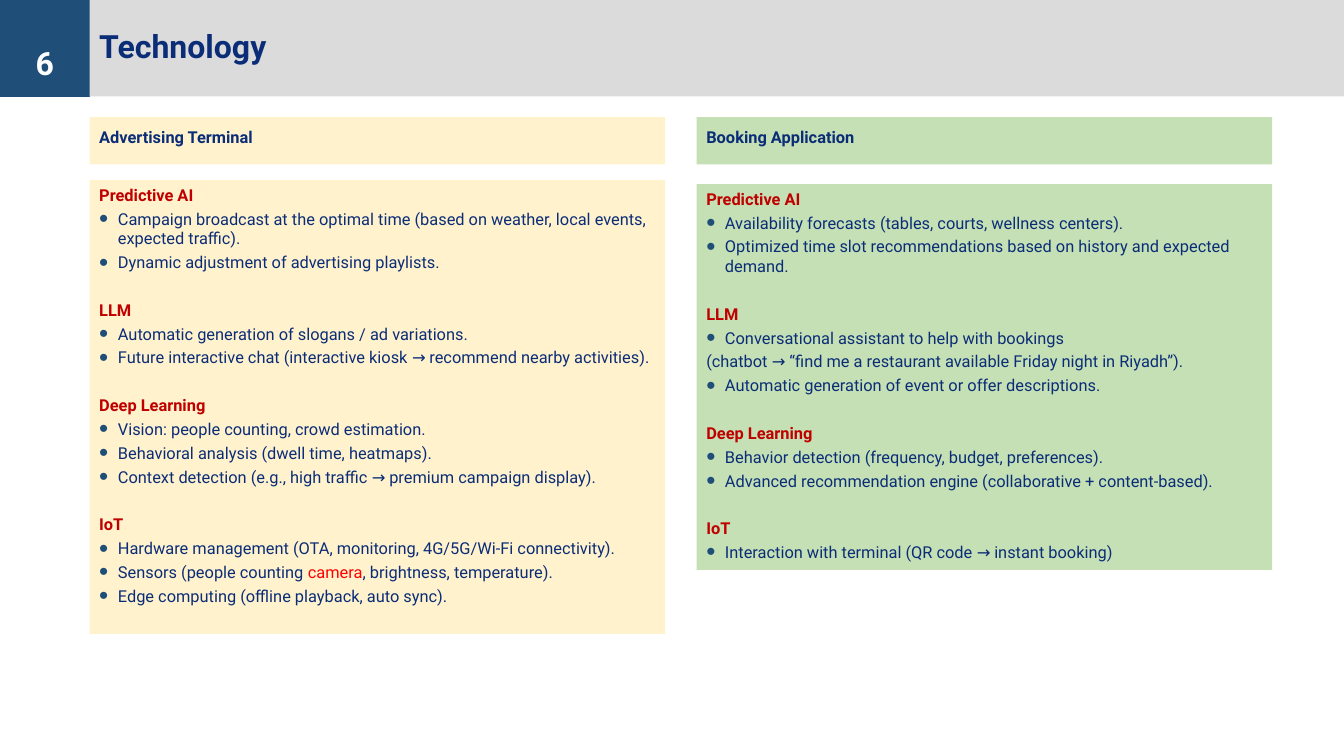
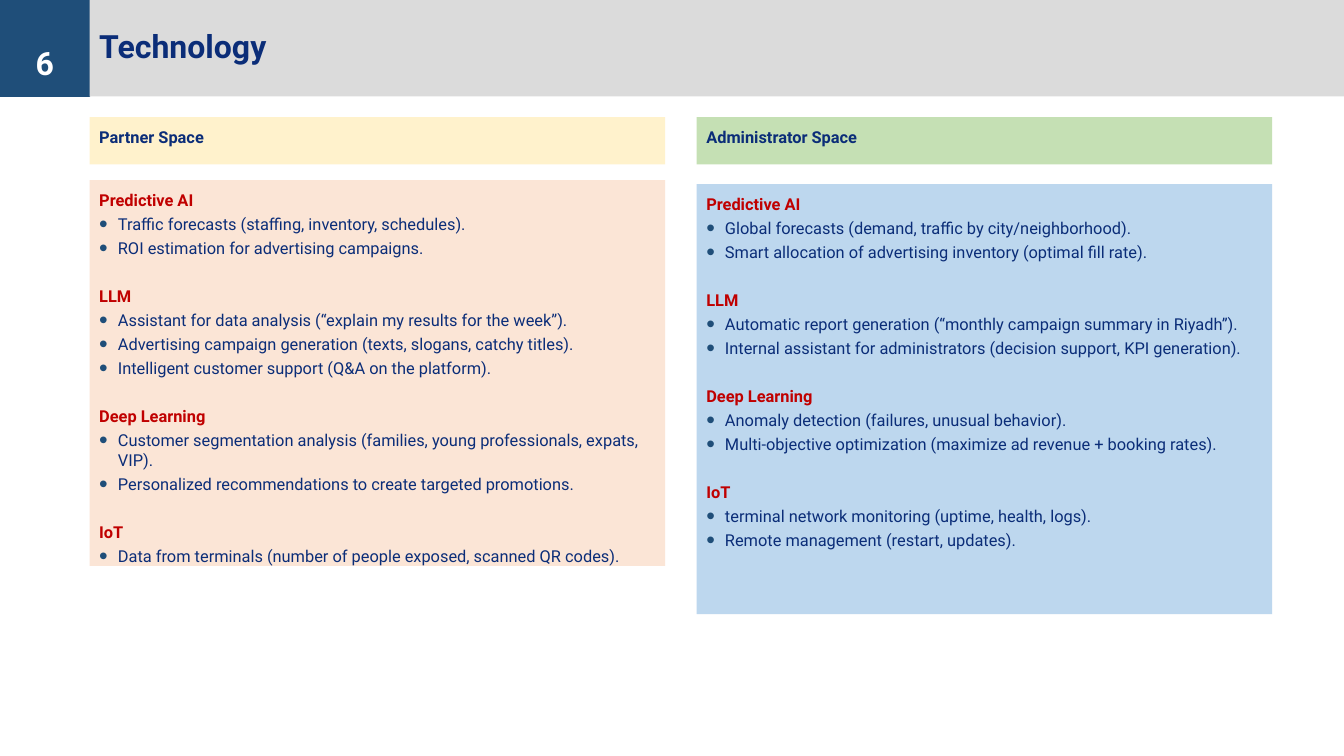
from lxml.etree import SubElement
from pptx import Presentation
from pptx.dml.color import RGBColor
from pptx.enum.shapes import MSO_SHAPE as SHAPE
from pptx.enum.text import MSO_ANCHOR as ANCHOR, PP_ALIGN as ALIGN
from pptx.oxml.ns import qn
from pptx.util import Inches, Pt

FONT = "Roboto"
NAVY, BLUE, GREY, WHITE = "0B2D78", "1F4E79", "DBDBDB", "FFFFFF"
DARK_RED, RED = "C00000", "FF0000"
YELLOW, GREEN, PEACH, SKY = "FFF2CC", "C5E0B4", "FBE5D6", "BDD7EE"

BAND_W, BAND_H = 0.91, 0.98
COLUMNS = [(0.91, 1.83), (7.08, 1.87)]
COLUMN_W = 5.85
HANG = 0.19
SECTION_GAP = 17.5

SLIDES = [
    dict(inset=0.05, before=3, bullet_size=159, panels=[
        dict(header="Advertising Terminal", fill=YELLOW, height=4.61, sections={
            "Predictive AI": [
                "Campaign broadcast at the optimal time (based on weather, local events, expected traffic).",
                "Dynamic adjustment of advertising playlists."],
            "LLM": [
                "Automatic generation of slogans / ad variations.",
                "Future interactive chat (interactive kiosk → recommend nearby activities)."],
            "Deep Learning": [
                "Vision: people counting, crowd estimation.",
                "Behavioral analysis (dwell time, heatmaps).",
                "Context detection (e.g., high traffic → premium campaign display)."],
            "IoT": [
                "Hardware management (OTA, monitoring, 4G/5G/Wi-Fi connectivity).",
                ["Sensors (people counting ", ("camera", RED), ", brightness, temperature)."],
                "Edge computing (offline playback, auto sync)."],
        }),
        dict(header="Booking Application", fill=GREEN, height=3.92, sections={
            "Predictive AI": [
                "Availability forecasts (tables, courts, wellness centers).",
                "Optimized time slot recommendations based on history and expected demand."],
            "LLM": [
                "Conversational assistant to help with bookings",
                "(chatbot → “find me a restaurant available Friday night in Riyadh”).",
                "Automatic generation of event or offer descriptions."],
            "Deep Learning": [
                "Behavior detection (frequency, budget, preferences).",
                "Advanced recommendation engine (collaborative + content-based)."],
            "IoT": ["Interaction with terminal (QR code → instant booking)"],
        }),
    ]),
    dict(inset=0.1, before=3.2, bullet_size=150, panels=[
        dict(header="Partner Space", fill=PEACH, height=3.92, sections={
            "Predictive AI": [
                "Traffic forecasts (staffing, inventory, schedules).",
                "ROI estimation for advertising campaigns."],
            "LLM": [
                "Assistant for data analysis (“explain my results for the week”).",
                "Advertising campaign generation (texts, slogans, catchy titles).",
                "Intelligent customer support (Q&A on the platform)."],
            "Deep Learning": [
                "Customer segmentation analysis (families, young professionals, expats, VIP).",
                "Personalized recommendations to create targeted promotions."],
            "IoT": ["Data from terminals (number of people exposed, scanned QR codes)."],
        }),
        dict(header="Administrator Space", fill=SKY, height=4.37, sections={
            "Predictive AI": [
                "Global forecasts (demand, traffic by city/neighborhood).",
                "Smart allocation of advertising inventory (optimal fill rate)."],
            "LLM": [
                "Automatic report generation (“monthly campaign summary in Riyadh”).",
                "Internal assistant for administrators (decision support, KPI generation)."],
            "Deep Learning": [
                "Anomaly detection (failures, unusual behavior).",
                "Multi-objective optimization (maximize ad revenue + booking rates)."],
            "IoT": [
                "terminal network monitoring (uptime, health, logs).",
                "Remote management (restart, updates)."],
        }),
    ]),
]


def rgb(color):
    return RGBColor.from_string(color)


def set_frame(sp, inset, anchor=ANCHOR.TOP):
    tf = sp.text_frame
    tf.word_wrap = True
    tf.vertical_anchor = anchor
    tf.margin_left = tf.margin_right = Inches(0.1)
    tf.margin_top = tf.margin_bottom = Inches(inset)
    return tf


def add_box(s, x, y, w, h, fill, line=None):
    sp = s.shapes.add_shape(SHAPE.RECTANGLE, Inches(x), Inches(y), Inches(w), Inches(h))
    sp.shadow.inherit = False
    sp.fill.solid()
    sp.fill.fore_color.rgb = rgb(fill)
    if line:
        sp.line.color.rgb = rgb(line)
        sp.line.width = Pt(2)
    else:
        sp.line.fill.background()
    return sp


def add_bullet(p, size):
    pPr = p._p.get_or_add_pPr()
    pPr.set("marL", str(Inches(HANG)))
    pPr.set("indent", str(-Inches(HANG)))
    color = SubElement(pPr, qn("a:buClr"))
    SubElement(color, qn("a:srgbClr"), val=BLUE)
    SubElement(pPr, qn("a:buSzPct"), val=str(size * 1000))
    SubElement(pPr, qn("a:buFont"), typeface="Arial")
    SubElement(pPr, qn("a:buChar"), char="•")


def add_text(tf, text, size=12, color=NAVY, bold=False, align=ALIGN.LEFT,
             before=0, spacing=None, bullet=None):
    p = tf.paragraphs[0]
    if p.runs:
        p = tf.add_paragraph()
    p.alignment = align
    p.space_before = Pt(before)
    if spacing:
        p.line_spacing = spacing
    if bullet:
        add_bullet(p, bullet)
    for part in [text] if isinstance(text, str) else text:
        words, tint = (part, color) if isinstance(part, str) else part
        r = p.add_run()
        r.text = words
        r.font.name = FONT
        r.font.size = Pt(size)
        r.font.bold = bold
        r.font.color.rgb = rgb(tint)


def add_title_band(s, title, number):
    add_box(s, 0, 0, BAND_W, BAND_H - 0.01, BLUE, line=BLUE)
    band = add_box(s, BAND_W, 0, 12.75, BAND_H, GREY)
    add_text(set_frame(band, 0.1, ANCHOR.MIDDLE), title, size=23.4, bold=True, spacing=0.9)
    box = s.shapes.add_textbox(0, 0, Inches(BAND_W), Inches(0.77))
    add_text(set_frame(box, 0.05), number, size=23.4, color=WHITE, bold=True,
             align=ALIGN.CENTER, spacing=2.0)


def add_header(s, x, text, fill):
    sp = add_box(s, x, 1.19, COLUMN_W, 0.48, fill)
    add_text(set_frame(sp, 0.1), text, bold=True, before=3.2)


def add_panel(s, x, y, panel, inset, before, bullet_size):
    sp = add_box(s, x, y, COLUMN_W, panel["height"], panel["fill"])
    tf = set_frame(sp, inset)
    for i, (heading, items) in enumerate(panel["sections"].items()):
        gap = SECTION_GAP if i else 0
        add_text(tf, heading, color=DARK_RED, bold=True, before=before + gap)
        for item in items:
            bullet = None if item[0] == "(" else bullet_size
            add_text(tf, item, before=before, bullet=bullet)


def main():
    prs = Presentation()
    prs.slide_width, prs.slide_height = Inches(13.66), Inches(7.68)
    for content in SLIDES:
        s = prs.slides.add_slide(prs.slide_layouts[6])
        add_title_band(s, "Technology", "6")
        for (x, y), tint, panel in zip(COLUMNS, (YELLOW, GREEN), content["panels"]):
            add_header(s, x, panel["header"], tint)
            add_panel(s, x, y, panel, content["inset"], content["before"],
                      content["bullet_size"])
    prs.save("out.pptx")


if __name__ == "__main__":
    main()
